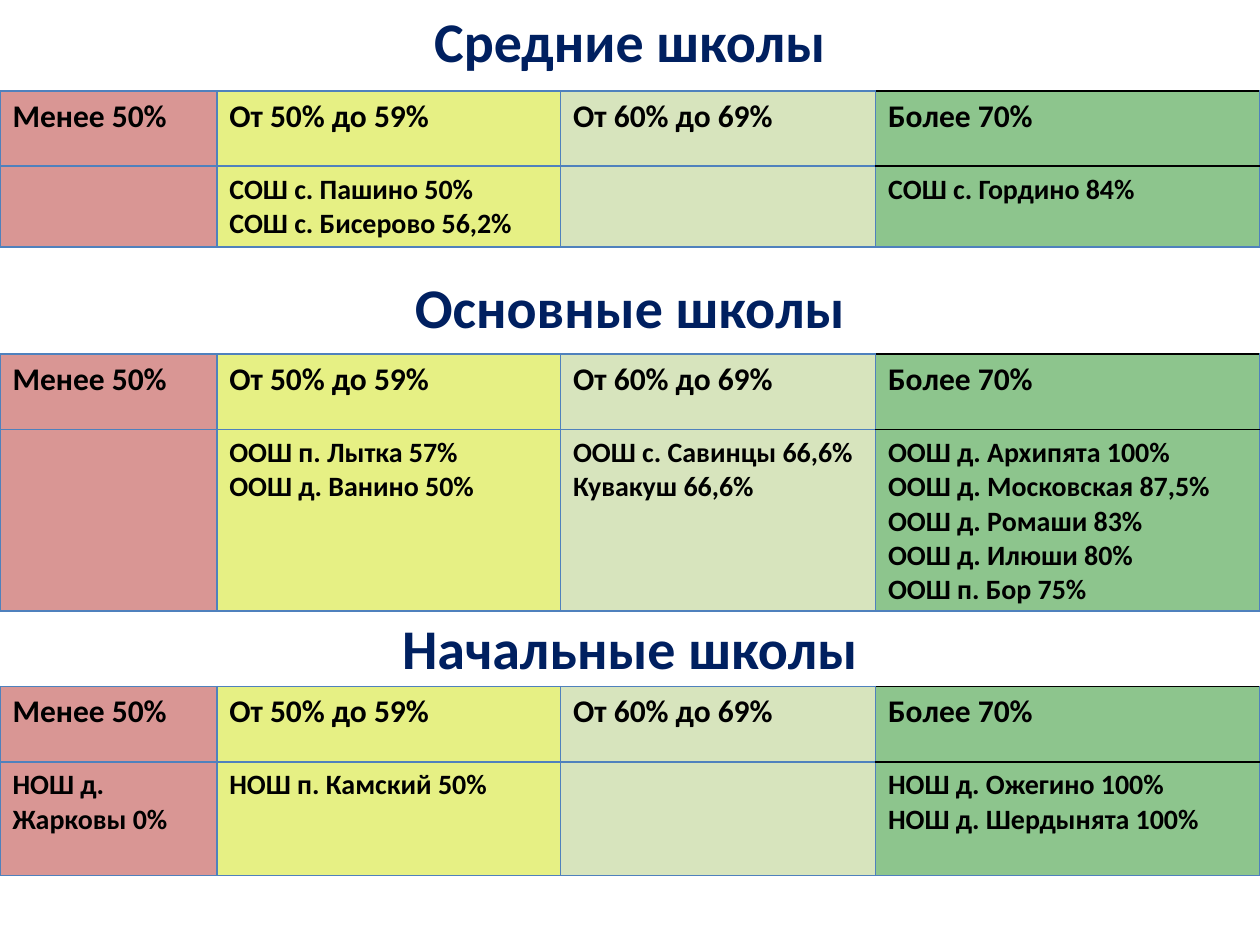
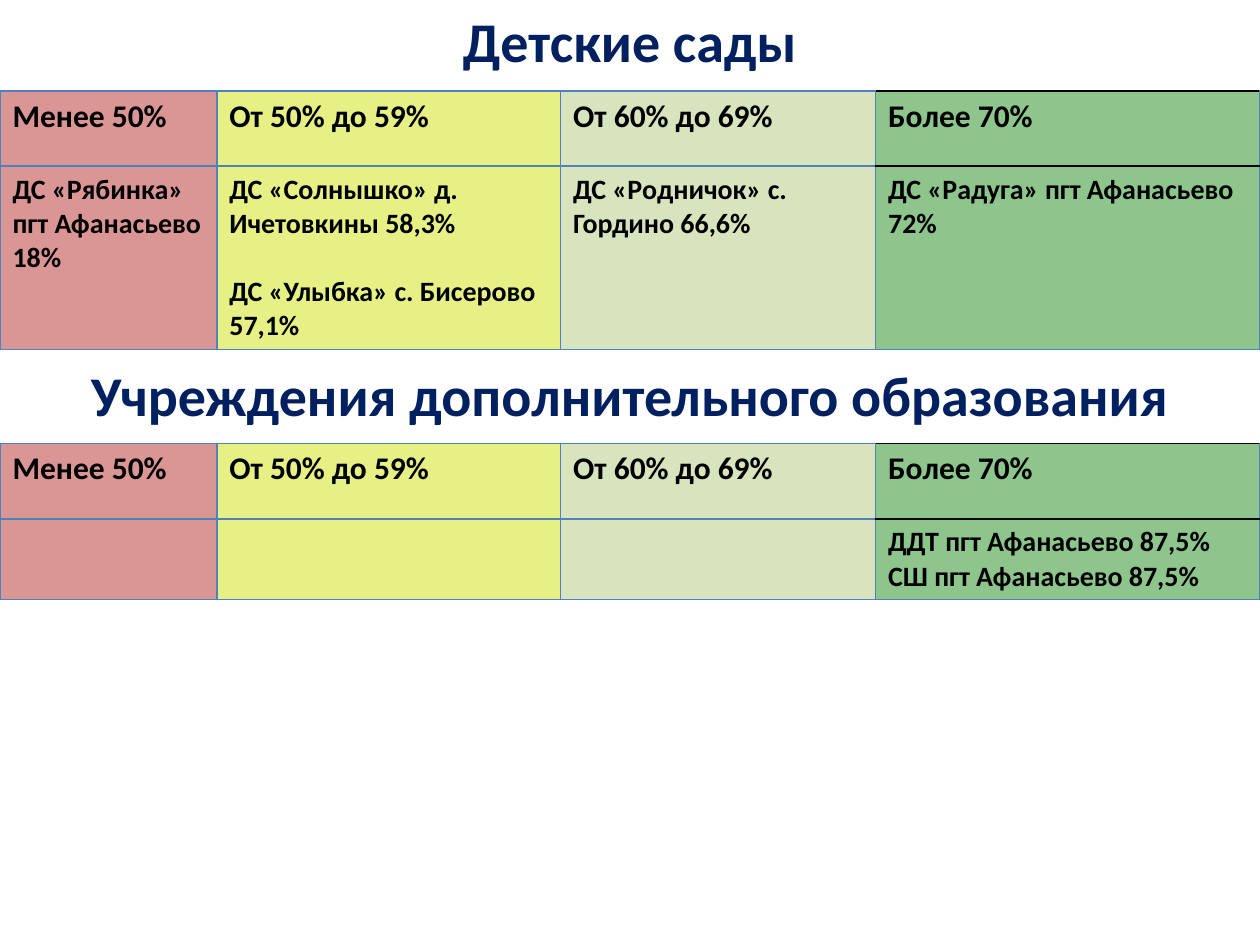
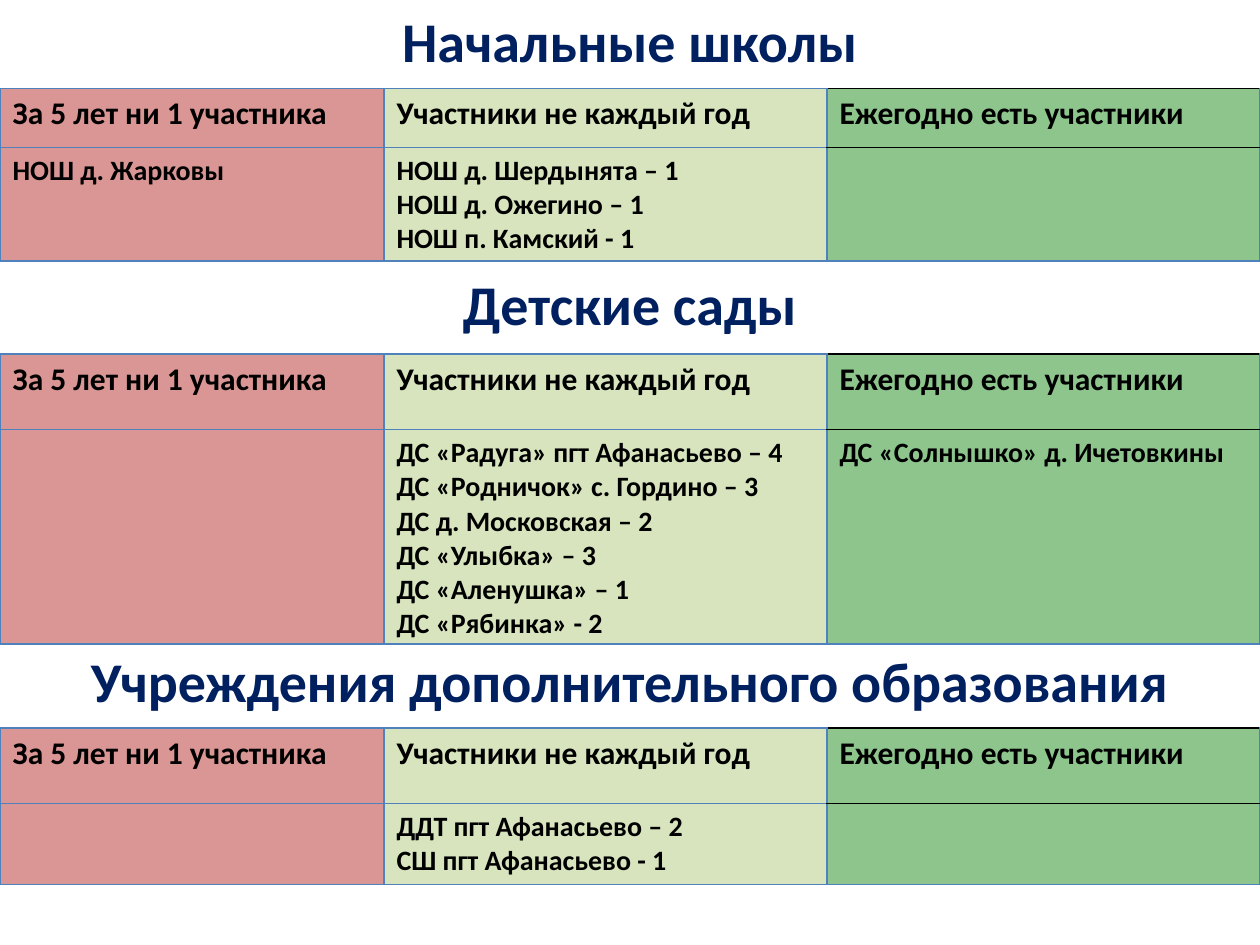
from pptx import Presentation
from pptx.dml.color import RGBColor
from pptx.enum.text import MSO_AUTO_SIZE, PP_ALIGN
from pptx.oxml.xmlchemy import OxmlElement
from pptx.util import Cm, Pt

HEX = {
    "navy": "002060", "black": "000000", "blue": "4F81BD",
    "red": "D99694", "yellow": "E6F084", "pale": "D7E4BD", "green": "8DC58D",
}
BASE = {"name": "Calibri", "bold": True}
TITLE = {**BASE, "size": Pt(32)}
HEAD = {**BASE, "size": Pt(18)}
BODY = {**BASE, "size": Pt(16)}
WIDE = 25.4
TALL = 1.52

# Each column: heading, fill, width in cm
SHARE = [
    ("Менее 50%", "red", 4.37),
    ("От 50% до 59%", "yellow", 6.93),
    ("От 60% до 69%", "pale", 6.35),
    ("Более 70%", "green", 7.75),
]
YEARS = [
    ("За 5 лет ни 1 участника", "red", 7.74),
    ("Участники не каждый год", "pale", 8.93),
    ("Ежегодно есть участники", "green", 8.73),
]

# Each block: title, title top, table top, head and body row heights, lists, gap in points
SLIDES = [
    (SHARE, [
        ("Средние школы", 0, 1.83, TALL, 1.63, [
            [],
            ["СОШ с. Пашино 50%", "СОШ с. Бисерово 56,2%"],
            [],
            ["СОШ с. Гордино 84%"],
        ], 0),
        ("Основные школы", 5.36, 7.14, TALL, 3.66, [
            [],
            ["ООШ п. Лытка 57%", "ООШ д. Ванино 50%"],
            ["ООШ с. Савинцы 66,6%", "Кувакуш 66,6%"],
            ["ООШ д. Архипята 100%", "ООШ д. Московская 87,5%",
             "ООШ д. Ромаши 83%", "ООШ д. Илюши 80%", "ООШ п. Бор 75%"],
        ], 0),
        ("Начальные школы", 12.24, 13.84, TALL, 2.29, [
            ["НОШ д. Жарковы 0%"],
            ["НОШ п. Камский 50%"],
            [],
            ["НОШ д. Ожегино 100%", "НОШ д. Шердынята 100%"],
        ], 0),
    ]),
    (SHARE, [
        ("Детские сады", 0, 1.83, TALL, 3.7, [
            ["ДС «Рябинка» пгт Афанасьево 18%"],
            ["ДС «Солнышко» д. Ичетовкины 58,3%", "ДС «Улыбка» с. Бисерово 57,1%"],
            ["ДС «Родничок» с. Гордино 66,6%"],
            ["ДС «Радуга» пгт Афанасьево 72%"],
        ], 19.5),
        ("Учреждения дополнительного образования", 7.14, 8.94, TALL, 1.63, [
            [],
            [],
            [],
            ["ДДТ пгт Афанасьево 87,5%", "СШ пгт Афанасьево 87,5%"],
        ], 0),
    ]),
    (YEARS, [
        ("Начальные школы", 0, 1.78, 1.19, 2.29, [
            ["НОШ д. Жарковы"],
            ["НОШ д. Шердынята – 1", "НОШ д. Ожегино – 1", "НОШ п. Камский - 1"],
            [],
        ], 0),
        ("Детские сады", 5.31, 7.14, TALL, 4.32, [
            [],
            ["ДС «Радуга» пгт Афанасьево – 4", "ДС «Родничок» с. Гордино – 3",
             "ДС д. Московская – 2", "ДС «Улыбка» – 3",
             "ДС «Аленушка» – 1", "ДС «Рябинка» - 2"],
            ["ДС «Солнышко» д. Ичетовкины"],
        ], 0),
        ("Учреждения дополнительного образования", 12.9, 14.68, TALL, 1.63, [
            [],
            ["ДДТ пгт Афанасьево – 2", "СШ пгт Афанасьево - 1"],
            [],
        ], 0),
    ]),
]


def style(font, form, tint):
    for key, value in form.items():
        setattr(font, key, value)
    font.color.rgb = RGBColor.from_string(HEX[tint])


def write(frame, lines, form, tint="black", align=PP_ALIGN.LEFT, gap=0):
    """Put each line in its own paragraph, with the gap between them."""
    for n, line in enumerate(lines):
        para = frame.add_paragraph() if n else frame.paragraphs[0]
        para.alignment = align
        if n and gap:
            para.space_before = Pt(gap)
        run = para.add_run()
        run.text = line
        style(run.font, form, tint)


def edge(cell, tints):
    """Draw the left, right, top and bottom borders in the given colours."""
    props = cell._tc.get_or_add_tcPr()
    for side, tint in zip("LRTB", tints):
        line = OxmlElement(f"a:ln{side}")
        line.set("w", str(Pt(1)))
        fill = OxmlElement("a:solidFill")
        shade = OxmlElement("a:srgbClr")
        shade.set("val", HEX[tint])
        fill.append(shade)
        line.append(fill)
        props.append(line)


def add_title(slide, text, top):
    box = slide.shapes.add_textbox(0, Cm(top), Cm(WIDE), Cm(1.63))
    frame = box.text_frame
    frame.word_wrap = True
    frame.auto_size = MSO_AUTO_SIZE.SHAPE_TO_FIT_TEXT
    write(frame, [text], TITLE, "navy", PP_ALIGN.CENTER)


def add_grid(slide, cols, top, rows, lists, gap):
    shape = slide.shapes.add_table(2, len(cols), 0, Cm(top), Cm(WIDE), Cm(sum(rows)))
    table = shape.table
    table.first_row = table.horz_banding = False
    for row, high in zip(table.rows, rows):
        row.height = Cm(high)
    for c, ((head, tint, wide), lines) in enumerate(zip(cols, lists)):
        table.columns[c].width = Cm(wide)
        rule = "black" if c == len(cols) - 1 else "blue"
        parts = [([head], HEAD, rule), (lines, BODY, "blue")]
        for r, (texts, form, base) in enumerate(parts):
            cell = table.cell(r, c)
            edge(cell, ["blue", "blue", rule, base])
            cell.fill.solid()
            cell.fill.fore_color.rgb = RGBColor.from_string(HEX[tint])
            write(cell.text_frame, texts, form, gap=gap)


def main():
    deck = Presentation()
    deck.slide_width, deck.slide_height = Cm(WIDE), Cm(19.05)
    for cols, blocks in SLIDES:
        slide = deck.slides.add_slide(deck.slide_layouts[6])
        for title, high, top, head, body, lists, gap in blocks:
            add_title(slide, title, high)
            add_grid(slide, cols, top, (head, body), lists, gap)
    deck.save("out.pptx")


if __name__ == "__main__":
    main()
